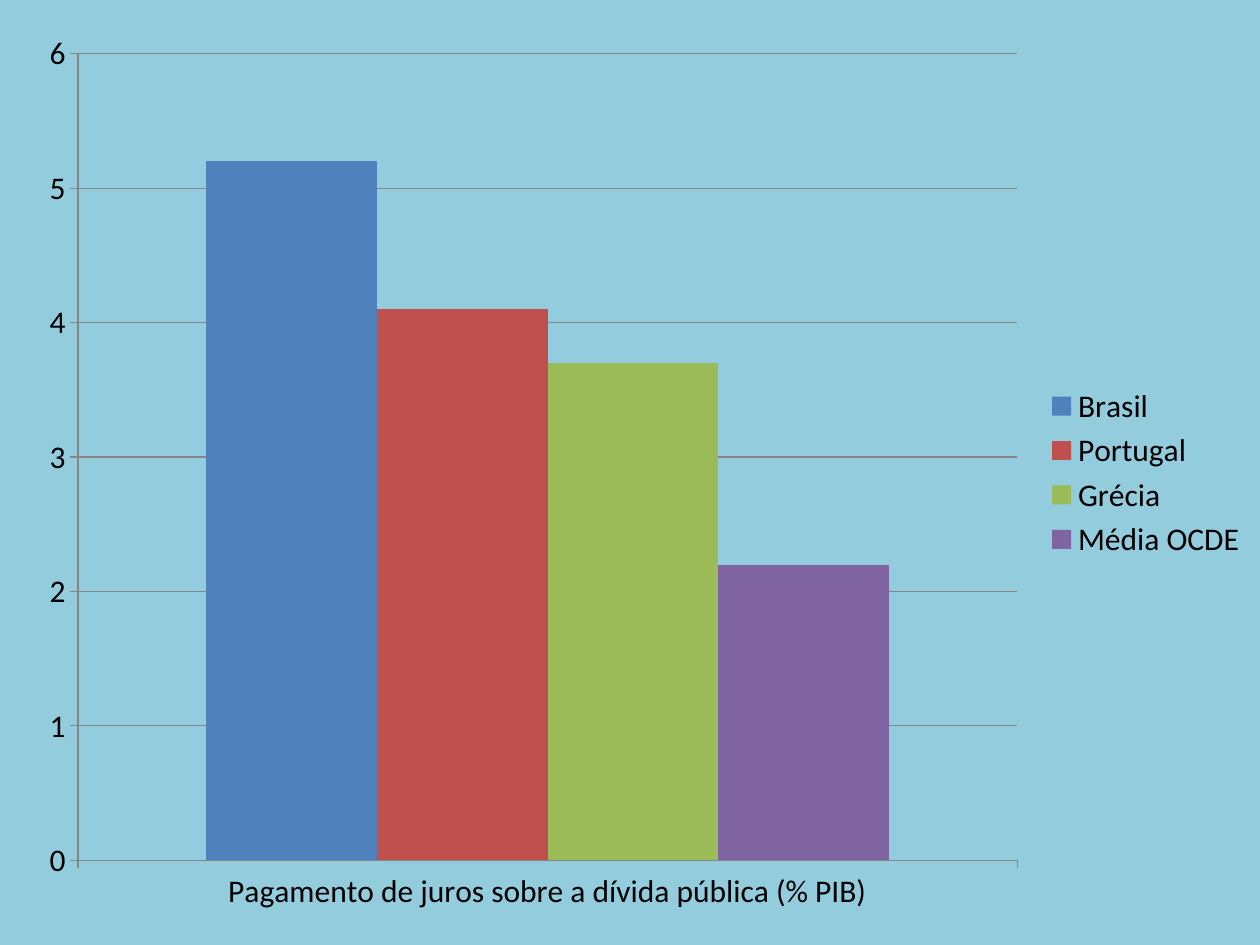
from pptx import Presentation
from pptx.chart.data import CategoryChartData
from pptx.dml.color import RGBColor
from pptx.enum import chart as kinds
from pptx.util import Cm, Pt

BACKGROUND = "93CDDD"
LINE = "868686"
CATEGORY = "Pagamento de juros sobre a dívida pública (% PIB)"
COUNTRIES = [
    ("Brasil", 5.2, "4F81BD"),
    ("Portugal", 4.1, "C0504D"),
    ("Grécia", 3.7, "9BBB59"),
    ("Média OCDE", 2.2, "8064A2"),
]


def paint(fill, color):
    fill.solid()
    fill.fore_color.rgb = RGBColor.from_string(color)


def draw_line(line):
    paint(line.fill, LINE)
    line.width = Pt(0.75)


def add_interest_chart(slide):
    data = CategoryChartData()
    data.categories = [CATEGORY]
    for name, value, _ in COUNTRIES:
        data.add_series(name, [value])
    chart = slide.shapes.add_chart(
        kinds.XL_CHART_TYPE.COLUMN_CLUSTERED,
        Cm(0.5), Cm(0.33), Cm(24.9), Cm(18.4), data,
    ).chart
    chart.has_title = False
    chart.font.name = "Calibri"
    chart.font.size = Pt(18)
    chart.font.color.rgb = RGBColor.from_string("000000")

    chart.has_legend = True
    chart.legend.position = kinds.XL_LEGEND_POSITION.RIGHT
    chart.legend.include_in_layout = False

    plot = chart.plots[0]
    plot.vary_by_categories = False
    plot.gap_width = 150
    plot.overlap = 0
    for series, (_, _, color) in zip(plot.series, COUNTRIES):
        paint(series.format.fill, color)

    for axis in (chart.category_axis, chart.value_axis):
        axis.major_tick_mark = kinds.XL_TICK_MARK.OUTSIDE
        axis.minor_tick_mark = kinds.XL_TICK_MARK.NONE
        draw_line(axis.format.line)
    values = chart.value_axis
    values.minimum_scale, values.maximum_scale, values.major_unit = 0, 6, 1
    values.tick_labels.number_format = "General"
    values.tick_labels.number_format_is_linked = False
    values.has_major_gridlines = True
    draw_line(values.major_gridlines.format.line)


def main():
    deck = Presentation()
    deck.slide_width, deck.slide_height = Cm(25.4), Cm(19.05)
    slide = deck.slides.add_slide(deck.slide_layouts[6])
    paint(slide.background.fill, BACKGROUND)
    add_interest_chart(slide)
    deck.save("out.pptx")


if __name__ == "__main__":
    main()
